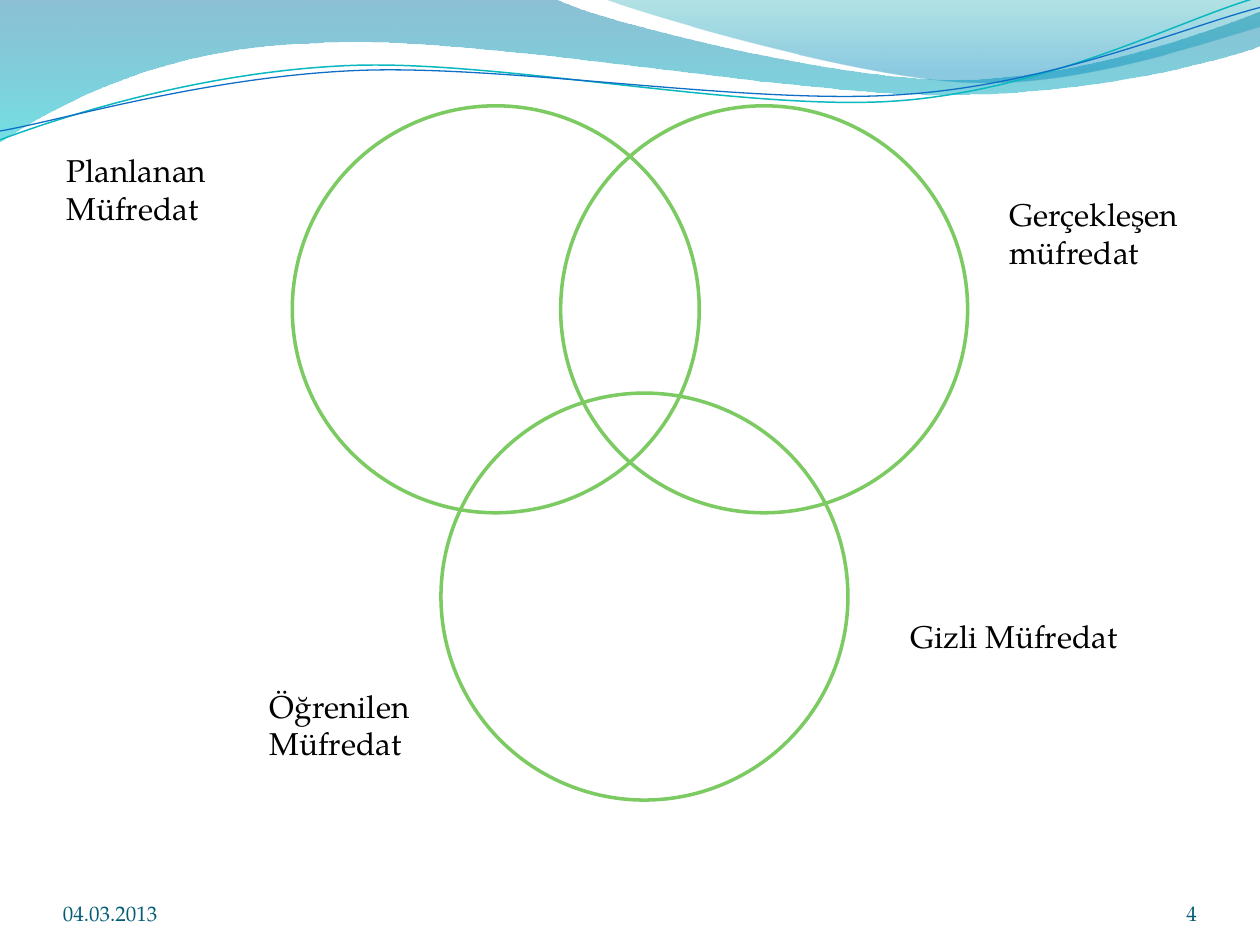
"""Build a curriculum slide with three overlapping circles under a wave header."""
from math import cos, radians, sin
from lxml import etree
from pptx import Presentation
from pptx import util as u
from pptx.dml.color import RGBColor
from pptx.enum import shapes, text
from pptx.oxml.ns import qn

COLORS = {"ring": "7CCA62", "text": "000000", "footer": "045D75",
          "teal_line": "0AB8BF", "blue_line": "0F6FC6",
          "deep": "0074A1", "aqua": "00C6CF", "sea": "00A1A9", "sky": "008BBF"}
FONT = "TeX Gyre Pagella"
TILT = 2.7

prs = Presentation()
prs.slide_width, prs.slide_height = u.Inches(10), u.Inches(7.5)
s = prs.slides.add_slide(prs.slide_layouts[6])


def add_curve(start, segments, close):
    """Draw cubic curves (six numbers) and straight lines (two) as a freeform."""
    pts = [(u.Inches(x), u.Inches(y)) for seg in segments for x, y in zip(seg[::2], seg[1::2])]
    fb = s.shapes.build_freeform(u.Inches(start[0]), u.Inches(start[1]))
    fb.add_line_segments(pts, close=close)
    sp = fb.convert_to_shape()
    sp.shadow.inherit = False
    lines = iter(list(sp._element.iter(qn("a:lnTo"))))
    for seg in segments:
        first = next(lines)
        if len(seg) == 6:
            first.tag = qn("a:cubicBezTo")
            for _ in range(2):
                ln = next(lines)
                first.append(ln[0])
                ln.getparent().remove(ln)
    return sp


def add_text(words, box, size, color, fmt, align=text.PP_ALIGN.LEFT):
    """Add a text box and apply the frame format values."""
    tf = s.shapes.add_textbox(*map(u.Inches, box)).text_frame
    for name, value in fmt.items():
        setattr(tf, name, value)
    p = tf.paragraphs[0]
    p.alignment = align
    r = p.add_run()
    r.text = words
    for name, value in {"name": FONT, "size": u.Pt(size)}.items():
        setattr(r.font, name, value)
    r.font.color.rgb = RGBColor.from_string(COLORS[color])


waves = [
    ((0, 0), [(4.4, -0.01), (4.76, 0.17, 6.64, 0.63, 7.58, 0.63),
              (8.53, 0.63, 9.58, 0.26, 10, 0.09), (10.01, 0.36),
              (9.83, 0.44, 8.7, 0.76, 7.46, 0.75), (6.22, 0.75, 3.82, 0.28, 2.57, 0.34),
              (1.29, 0.36, 0.46, 0.83, -0.01, 1.13), (0, 0)],
     [(0, "deep", 45), (1, "aqua", 55)]),
    ((4.79, -0.01), [(5.09, 0.11, 6.82, 0.62, 7.69, 0.65),
                     (8.56, 0.69, 9.61, 0.32, 10, 0.21), (10, 0), (4.79, -0.01)],
     [(0, "sea", 30), (0.8, "sky", 45)]),
]
for start, segments, stops in waves:
    sp = add_curve(start, segments, True)
    sp.line.fill.background()
    sp.fill.gradient()
    sp.fill.gradient_angle = 270
    for stop, (position, color, _) in zip(sp.fill.gradient_stops, stops):
        stop.position = position
        stop.color.rgb = RGBColor.from_string(COLORS[color])
    for clr, (_, _, opacity) in zip(sp._element.spPr.iter(qn("a:srgbClr")), stops):
        etree.SubElement(clr, qn("a:alpha")).set("val", str(opacity * 1000))

strands = [
    ((4.99, 0.58), [(0, 1.11), (0.48, 0.93), (1.58, 0.57), (2.77, 0.52), (3.95, 0.47),
                    (5.93, 0.89), (7.13, 0.8), (8.33, 0.71), (9.38, 0.15), (9.98, -0.02)],
     "teal_line", 0.85),
    ((5, 0.59), [(0, 1.04), (0.47, 0.96), (1.64, 0.61), (2.83, 0.56), (4.03, 0.51),
                 (5.97, 0.84), (7.17, 0.75), (8.36, 0.67), (9.41, 0.21), (10, 0.06)],
     "blue_line", 0.75),
]
ca, sa = cos(radians(TILT)), sin(radians(TILT))
ribbons = []
for (cx, cy), pts, color, width in strands:
    level = [(cx + (x - cx) * ca - (y - cy) * sa, cy + (x - cx) * sa + (y - cy) * ca)
             for x, y in pts]
    sp = add_curve(level[0], [sum(level[i:i + 3], ()) for i in (1, 4, 7)], False)
    sp.rotation = -TILT
    sp.fill.background()
    sp.line.color.rgb = RGBColor.from_string(COLORS[color])
    sp.line.width = u.Pt(width)
    ribbons.append(sp)
s.shapes.add_group_shape(ribbons)

for left, top in [(2.32, 0.84), (4.45, 0.84), (3.5, 3.12)]:
    sp = s.shapes.add_shape(shapes.MSO_SHAPE.OVAL, *map(u.Inches, (left, top, 3.23, 3.23)))
    sp.shadow.inherit = False
    sp.fill.background()
    sp.line.color.rgb = RGBColor.from_string(COLORS["ring"])
    sp.line.width = u.Pt(2)

label = {"word_wrap": True, "auto_size": text.MSO_AUTO_SIZE.SHAPE_TO_FIT_TEXT}
for words, box in [("Planlanan Müfredat", (0.43, 1.15, 1.89, 0.71)),
                   ("Öğrenilen Müfredat", (2.04, 5.4, 1.5, 0.71)),
                   ("Gerçekleşen müfredat", (7.91, 1.5, 1.65, 0.71)),
                   ("Gizli Müfredat", (7.13, 4.85, 2.13, 0.4))]:
    add_text(words, box, 18, "text", label)

footer = {"word_wrap": True, "vertical_anchor": text.MSO_ANCHOR.BOTTOM,
          "margin_left": 0, "margin_right": 0, "margin_top": 0, "margin_bottom": 0}
add_text("4", (8.67, 6.95, 0.83, 0.4), 12, "footer", footer, text.PP_ALIGN.RIGHT)
add_text("04.03.2013", (0.5, 6.95, 2.33, 0.4), 12, "footer", footer)

prs.save("out.pptx")
